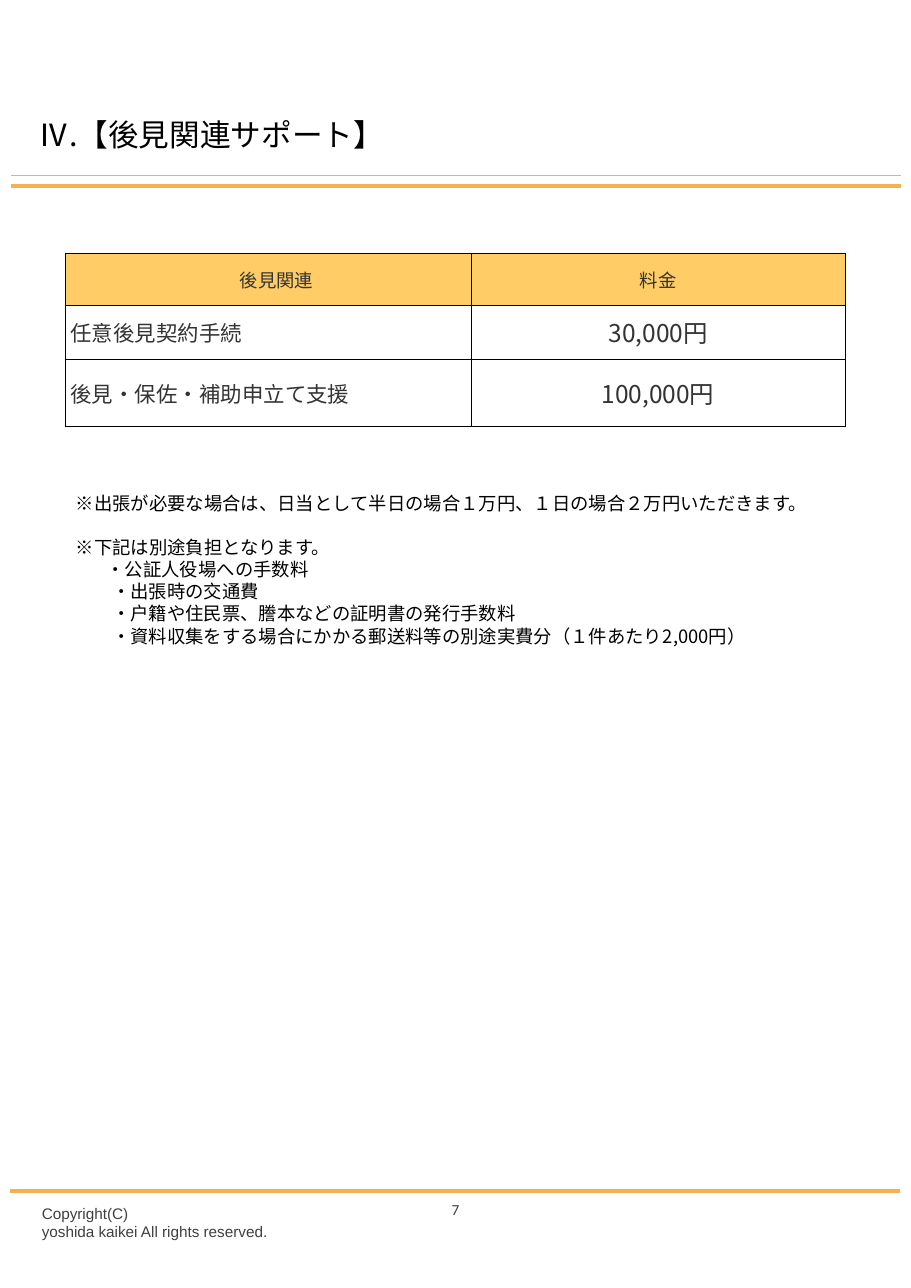
"""Build the guardianship support price page."""
from dataclasses import dataclass

from lxml.etree import SubElement
from pptx import Presentation
from pptx.dml.color import RGBColor
from pptx.enum.shapes import MSO_CONNECTOR
from pptx.enum.text import MSO_ANCHOR as Anchor, PP_ALIGN as Align
from pptx.oxml.ns import qn
from pptx.slide import Slide
from pptx.table import _Cell as Cell
from pptx.text.text import TextFrame
from pptx.util import Inches, Pt


@dataclass(frozen=True)
class Theme:
    """Colours, fonts and type sizes of the page."""
    rule: str = "F5B050"
    header: str = "FFCC66"
    paper: str = "FFFFFF"
    ink: str = "000000"
    table_ink: str = "333333"
    footer_ink: str = "404040"
    japanese: str = "Noto Sans CJK JP"
    footer: str = "Arial"
    number: str = "Calibri"
    title_size: float = 20
    price_size: float = 16
    service_size: float = 14
    body_size: float = 12
    footer_size: float = 10
    note_pitch: float = 14.4


@dataclass(frozen=True)
class Line:
    """One paragraph with its indent in inches and space before in points."""
    text: str
    indent: float = 0
    before: float = 0


@dataclass(frozen=True)
class Rule:
    """A horizontal rule across the page."""
    left: float
    top: float
    weight: float


@dataclass(frozen=True)
class Fee:
    """A service and its price."""
    service: str
    price: str


THEME = Theme()
RULE_LENGTH = 8.08
RULES = [Rule(0.1, 1.59, 0.75), Rule(0.1, 1.69, 2.25), Rule(0.09, 10.81, 2.25)]
FEES = [
    Fee("後見関連", "料金"),
    Fee("任意後見契約手続", "30,000円"),
    Fee("後見・保佐・補助申立て支援", "100,000円"),
]
COLUMN_WIDTHS = [3.69, 3.39]
ROW_HEIGHTS = [0.47, 0.49, 0.61]
NOTES = [
    Line("※出張が必要な場合は、日当として半日の場合１万円、１日の場合２万円いただきます。"),
    Line("※下記は別途負担となります。", before=THEME.note_pitch),
    Line("・公証人役場への手数料", indent=0.28),
    Line("・出張時の交通費", indent=0.33),
    Line("・戸籍や住民票、謄本などの証明書の発行手数料", indent=0.33),
    Line("・資料収集をする場合にかかる郵送料等の別途実費分（１件あたり2,000円）", indent=0.33),
]


def write(frame: TextFrame, lines: list[Line], *, size: float, color: str = THEME.ink,
          font: str = THEME.japanese, align: Align = Align.LEFT,
          pitch: float | None = None) -> None:
    """Fill a text frame with formatted paragraphs."""
    for index, line in enumerate(lines):
        paragraph = frame.add_paragraph() if index else frame.paragraphs[0]
        paragraph.alignment = align
        if pitch:
            paragraph.line_spacing = Pt(pitch)
        if line.before:
            paragraph.space_before = Pt(line.before)
        if line.indent:
            paragraph._p.get_or_add_pPr().set("marL", str(Inches(line.indent)))
        run = paragraph.add_run()
        run.text = line.text
        run.font.size = Pt(size)
        run.font.color.rgb = RGBColor.from_string(color)
        run.font.name = font
        SubElement(run._r.get_or_add_rPr(), qn("a:ea"), typeface=font)


def set_margins(target: TextFrame | Cell, across: float, down: float) -> None:
    """Set equal side margins and equal top and bottom margins."""
    target.margin_left = target.margin_right = Inches(across)
    target.margin_top = target.margin_bottom = Inches(down)


def add_text(slide: Slide, left: float, top: float, width: float, height: float,
             across: float = 0.1, down: float = 0.05,
             anchor: Anchor = Anchor.TOP) -> TextFrame:
    """Add a wrapping text box and return its frame."""
    frame = slide.shapes.add_textbox(
        Inches(left), Inches(top), Inches(width), Inches(height)).text_frame
    frame.word_wrap = True
    frame.vertical_anchor = anchor
    set_margins(frame, across, down)
    return frame


def add_rule(slide: Slide, rule: Rule) -> None:
    """Draw one horizontal rule."""
    top = Inches(rule.top)
    stroke = slide.shapes.add_connector(
        MSO_CONNECTOR.STRAIGHT, Inches(rule.left), top, Inches(rule.left + RULE_LENGTH), top)
    stroke.line.color.rgb = RGBColor.from_string(THEME.rule)
    stroke.line.width = Pt(rule.weight)
    SubElement(stroke._element.spPr, qn("a:effectLst"))


def style_cell(cell: Cell, fill: str) -> None:
    """Give a cell thin borders, a fill and middle anchoring."""
    properties = cell._tc.get_or_add_tcPr()
    for side in ("lnL", "lnR", "lnT", "lnB"):
        border = SubElement(properties, qn(f"a:{side}"), w=str(Pt(0.5)))
        SubElement(SubElement(border, qn("a:solidFill")), qn("a:srgbClr"), val=THEME.ink)
    cell.fill.solid()
    cell.fill.fore_color.rgb = RGBColor.from_string(fill)
    cell.vertical_anchor = Anchor.MIDDLE


def add_fees(slide: Slide) -> None:
    """Add the price table."""
    table = slide.shapes.add_table(
        len(FEES), len(COLUMN_WIDTHS), Inches(0.59), Inches(2.3),
        Inches(sum(COLUMN_WIDTHS)), Inches(sum(ROW_HEIGHTS))).table
    table.horz_banding = False
    for column, width in zip(table.columns, COLUMN_WIDTHS):
        column.width = Inches(width)
    for index, (fee, height) in enumerate(zip(FEES, ROW_HEIGHTS)):
        table.rows[index].height = Inches(height)
        is_header = index == 0
        sizes = ([THEME.body_size] * 2 if is_header
                 else [THEME.service_size, THEME.price_size])
        for column, (text, size) in enumerate(zip((fee.service, fee.price), sizes)):
            cell = table.cell(index, column)
            style_cell(cell, THEME.header if is_header else THEME.paper)
            is_service = column == 0 and not is_header
            margin = 0.05 if is_service else 0
            set_margins(cell, margin, margin)
            write(cell.text_frame, [Line(text)], size=size, color=THEME.table_ink,
                  align=Align.LEFT if is_service else Align.CENTER)
    table.cell(0, 0).margin_left = Inches(0.15)


def main() -> None:
    """Build and save the page."""
    deck = Presentation()
    deck.slide_width, deck.slide_height = Inches(8.27), Inches(11.69)
    slide = deck.slides.add_slide(deck.slide_layouts[6])
    for rule in RULES:
        add_rule(slide, rule)
    write(add_text(slide, 0.27, 10.87, 2.76, 0.45, 0.11, 0.06),
          [Line("Copyright(C)"), Line("yoshida kaikei All rights reserved.")],
          size=THEME.footer_size, color=THEME.footer_ink, font=THEME.footer)
    write(add_text(slide, 3.17, 10.84, 1.93, 0.62), [Line("7")],
          size=THEME.footer_size, color=THEME.footer_ink, font=THEME.number,
          align=Align.CENTER)
    write(add_text(slide, 0.25, 1, 4.91, 0.44, anchor=Anchor.MIDDLE),
          [Line("Ⅳ.【後見関連サポート】")], size=THEME.title_size)
    add_fees(slide)
    write(add_text(slide, 0.59, 4.43, 7.57, 1.73, 0.1, 0.04), NOTES,
          size=THEME.body_size, pitch=THEME.note_pitch)
    deck.save("out.pptx")


if __name__ == "__main__":
    main()
